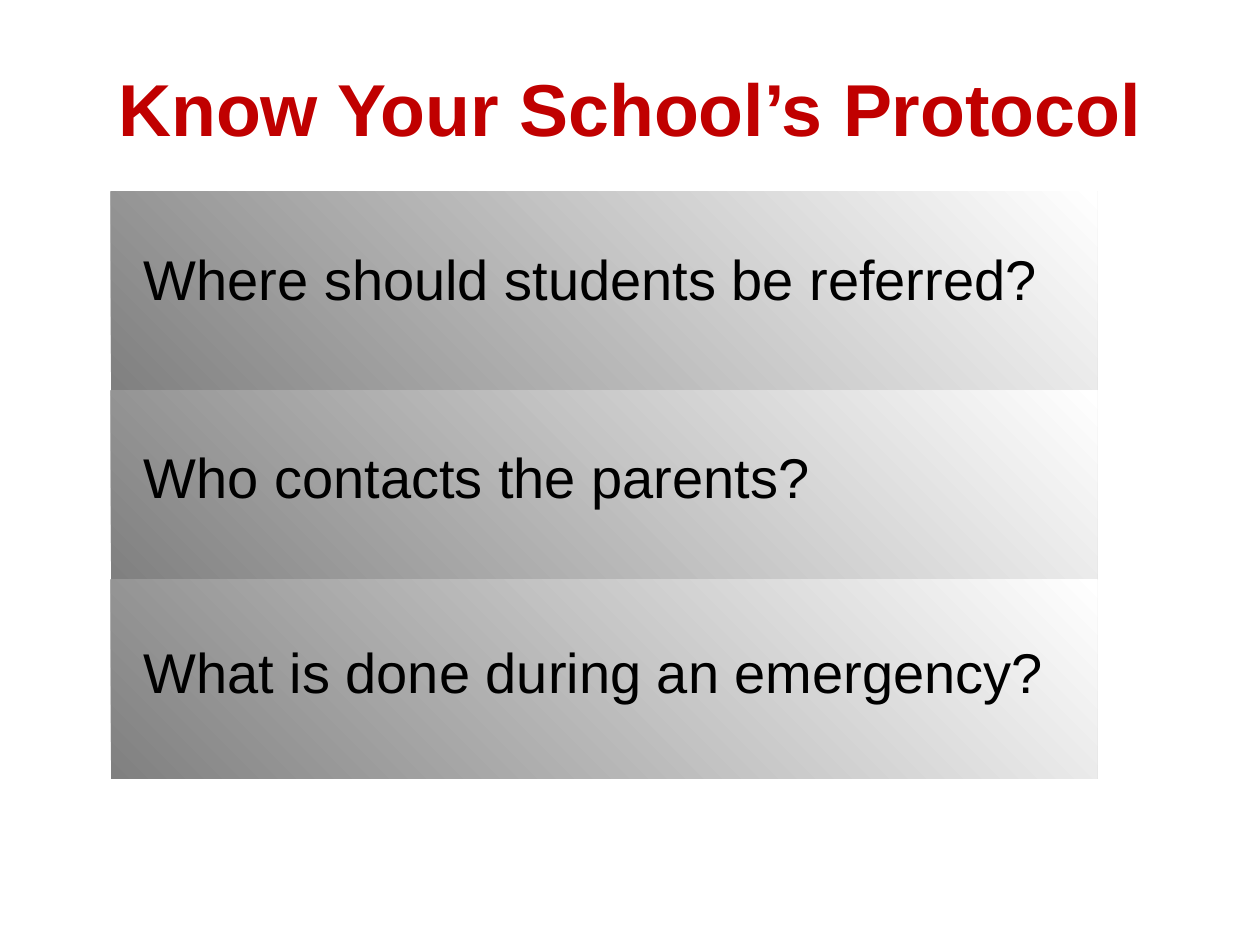
from dataclasses import dataclass

from pptx import Presentation
from pptx.dml.color import RGBColor
from pptx.enum.shapes import MSO_SHAPE
from pptx.enum.text import PP_ALIGN
from pptx.util import Emu, Pt

EMU_PER_PX = 9144


@dataclass(frozen=True)
class Theme:
    font: str = "Arial"
    title_size: int = 42
    question_size: int = 32
    title_color: str = "C00000"
    question_color: str = "000000"
    band_colors: tuple = ("808080", "FFFFFF")
    band_angle: int = 45


def px(*lengths):
    return [Emu(length * EMU_PER_PX) for length in lengths]


class SlideBuilder:
    def __init__(self, slide, theme):
        self.slide = slide
        self.theme = theme

    def band(self, left, top, width, height):
        band = self.slide.shapes.add_shape(
            MSO_SHAPE.RECTANGLE, *px(left, top, width, height)
        )
        band.shadow.inherit = False
        band.line.fill.background()
        band.fill.gradient()
        band.fill.gradient_angle = self.theme.band_angle
        for stop, color in zip(band.fill.gradient_stops, self.theme.band_colors):
            stop.color.rgb = RGBColor.from_string(color)

    def text(self, words, bounds, size, color, bold=False, align=PP_ALIGN.LEFT):
        box = self.slide.shapes.add_textbox(*px(*bounds))
        frame = box.text_frame
        frame_format = {
            "word_wrap": True,
            "margin_left": 0,
            "margin_top": 0,
            "margin_right": 0,
            "margin_bottom": 0,
        }
        for name, value in frame_format.items():
            setattr(frame, name, value)
        para = frame.paragraphs[0]
        para.alignment = align
        span = para.add_run()
        span.text = words
        font_format = {"name": self.theme.font, "size": Pt(size), "bold": bold}
        for name, value in font_format.items():
            setattr(span.font, name, value)
        span.font.color.rgb = RGBColor.from_string(color)

    def title(self, words, bounds):
        self.text(
            words,
            bounds,
            self.theme.title_size,
            self.theme.title_color,
            bold=True,
            align=PP_ALIGN.CENTER,
        )

    def question(self, words, bounds):
        self.text(words, bounds, self.theme.question_size, self.theme.question_color)


def main():
    deck = Presentation()
    deck.slide_width, deck.slide_height = px(1000, 750)
    page = SlideBuilder(deck.slides.add_slide(deck.slide_layouts[6]), Theme())

    page.title("Know Your School’s Protocol", (50, 50, 900, 71))

    band_top = 152
    for band_height in (158, 150, 158):
        page.band(88, band_top, 783, band_height)
        band_top += band_height

    questions = (
        ("Where should students be referred?", 194, 741, 70),
        ("Who contacts the parents?", 351, 631, 67),
        ("What is done during an emergency?", 506, 757, 68),
    )
    for words, top, width, height in questions:
        page.question(words, (114, top, width, height))

    deck.save("out.pptx")


if __name__ == "__main__":
    main()
